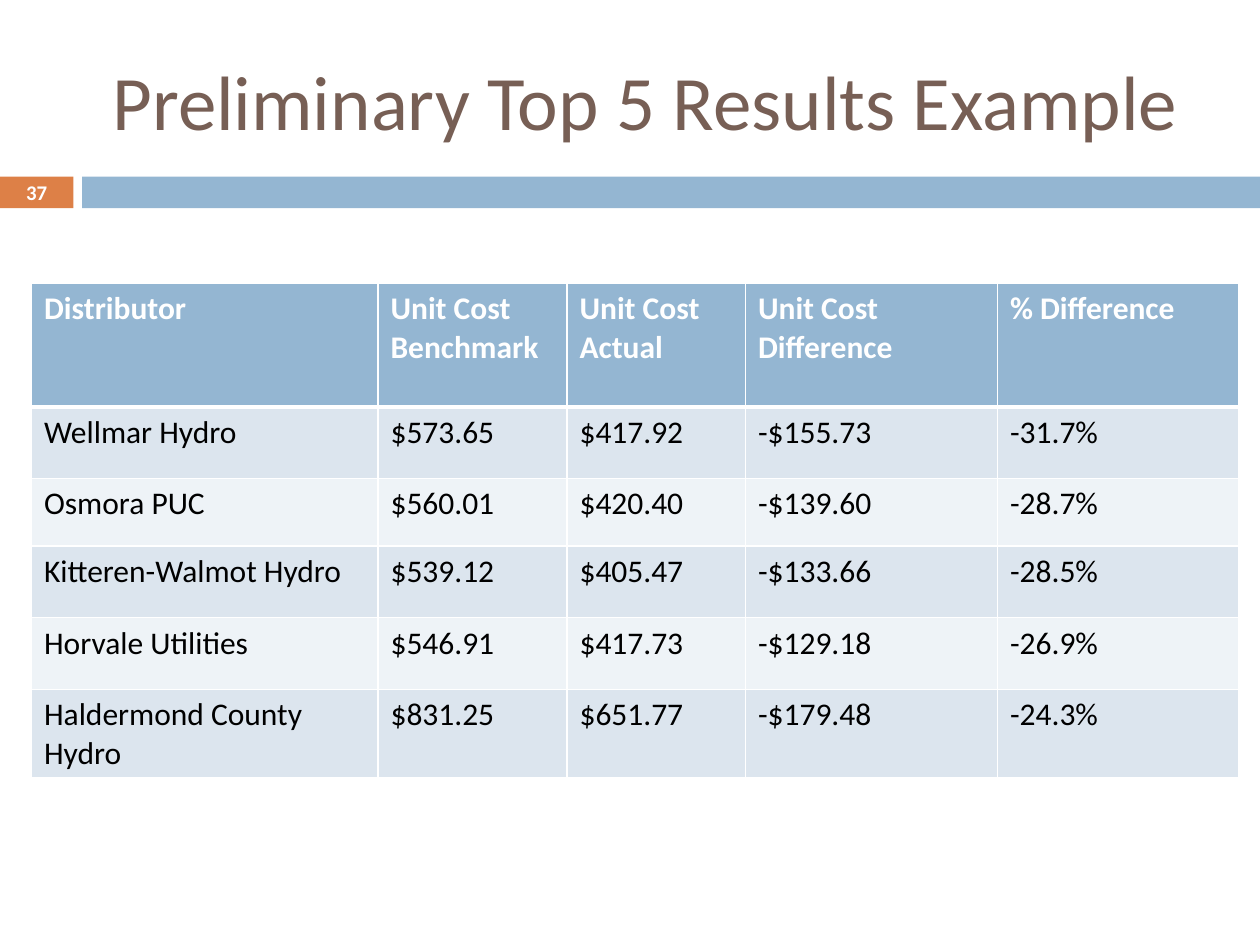
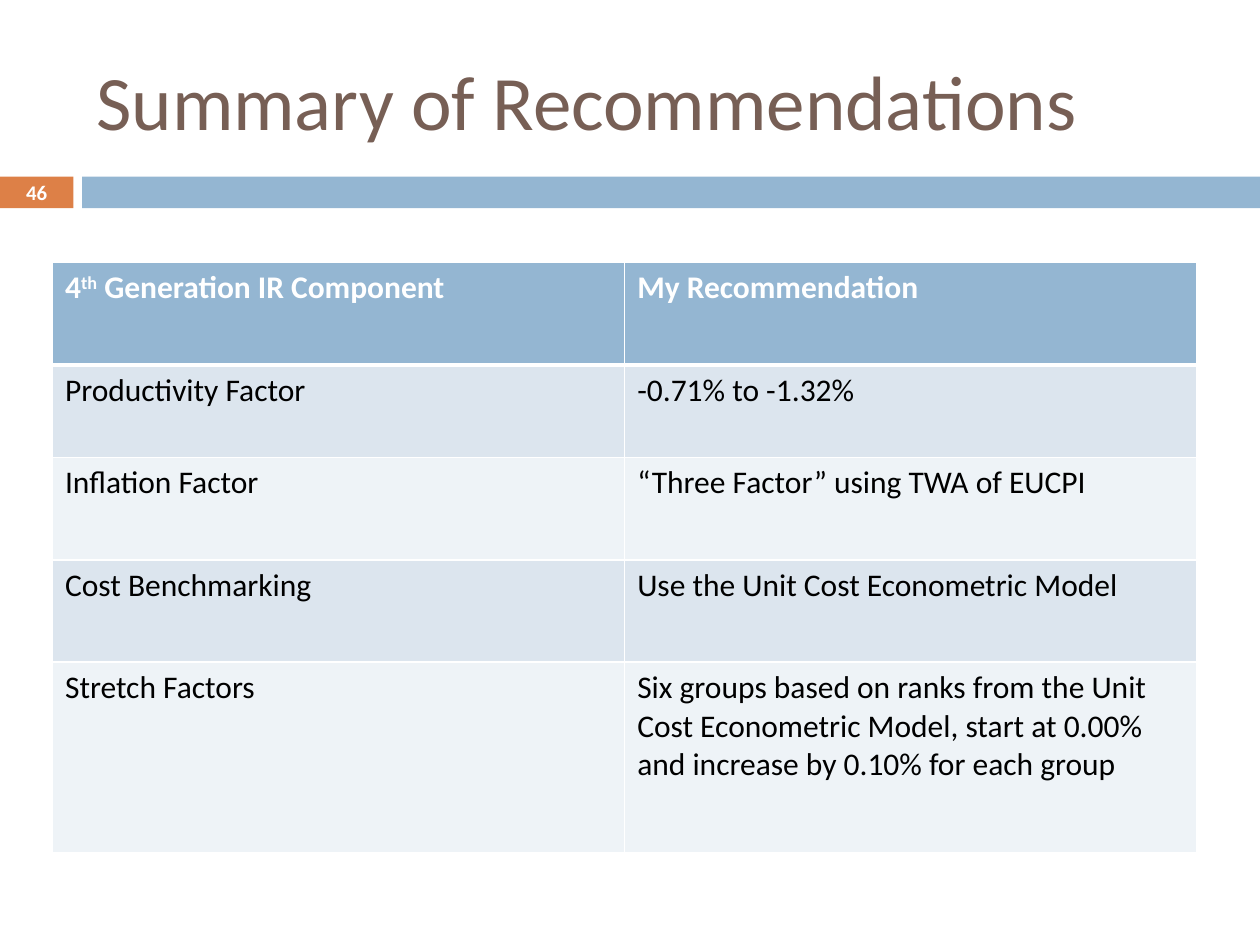
from dataclasses import dataclass

from lxml import etree
from pptx import Presentation
from pptx.dml.color import RGBColor
from pptx.enum.shapes import MSO_SHAPE
from pptx.enum.text import MSO_ANCHOR, PP_ALIGN
from pptx.oxml.ns import qn
from pptx.util import Pt

RECT = MSO_SHAPE.RECTANGLE
MIDDLE = MSO_ANCHOR.MIDDLE
LEFT, CENTER = PP_ALIGN.LEFT, PP_ALIGN.CENTER


@dataclass(frozen=True)
class Theme:
    font: str = "Calibri"
    title: str = "775F55"
    accent: str = "DD8047"
    band: str = "94B6D2"
    row_dark: str = "DCE5EE"
    row_light: str = "EEF3F7"
    white: str = "FFFFFF"
    black: str = "000000"
    title_size: float = 44
    table_size: float = 18
    number_size: float = 11.9
    thin_line: float = 1
    header_line: float = 3


@dataclass(frozen=True)
class Box:
    left: float
    top: float
    width: float
    height: float

    def lengths(self) -> tuple:
        return Pt(self.left), Pt(self.top), Pt(self.width), Pt(self.height)


@dataclass(frozen=True)
class TableData:
    left: float
    top: float
    col_widths: tuple
    row_heights: tuple
    rows: tuple


@dataclass(frozen=True)
class SlideData:
    title: str
    title_align: PP_ALIGN
    number: str
    table: TableData


THEME = Theme()
NUMBER_BLOCK = Box(0, 101, 42, 18)
BAND = Box(47, 101, 673, 18)
TITLE = Box(48, 18, 642, 78)

# A caret pair marks superscript text
SUPERSCRIPT_MARK = "^"

SLIDES = (
    SlideData("Preliminary Top 5 Results Example", CENTER, "37", TableData(
        18, 162, (198, 108, 102, 144, 138), (70.5, 41, 38.5, 41, 41, 41), (
            ("Distributor", "Unit Cost Benchmark", "Unit Cost Actual",
             "Unit Cost Difference", "% Difference"),
            ("Wellmar Hydro", "$573.65", "$417.92", "-$155.73", "-31.7%"),
            ("Osmora PUC", "$560.01", "$420.40", "-$139.60", "-28.7%"),
            ("Kitteren-Walmot Hydro", "$539.12", "$405.47", "-$133.66", "-28.5%"),
            ("Horvale Utilities", "$546.91", "$417.73", "-$129.18", "-26.9%"),
            ("Haldermond County Hydro", "$831.25", "$651.77", "-$179.48", "-24.3%"),
        ))),
    SlideData("Summary of Recommendations", LEFT, "46", TableData(
        30, 150, (327, 327), (58.5, 53, 58.5, 58.5, 109), (
            ("4^th^ Generation IR Component", "My Recommendation"),
            ("Productivity Factor", "-0.71% to -1.32%"),
            ("Inflation Factor", "“Three Factor” using TWA of EUCPI"),
            ("Cost Benchmarking", "Use the Unit Cost Econometric Model"),
            ("Stretch Factors",
             "Six groups based on ranks from the Unit Cost Econometric Model, "
             "start at 0.00% and increase by 0.10% for each group"),
        ))),
)


def style_run(r, size: float, color: str, bold: bool = False) -> None:
    r.font.name = THEME.font
    r.font.size = Pt(size)
    r.font.bold = bold
    r.font.color.rgb = RGBColor.from_string(color)


def add_bar(slide, box: Box, color: str) -> None:
    sp = slide.shapes.add_shape(RECT, *box.lengths())
    sp.shadow.inherit = False
    sp.fill.solid()
    sp.fill.fore_color.rgb = RGBColor.from_string(color)
    sp.line.fill.background()


def add_label(slide, box: Box, text: str, size: float, color: str,
              align: PP_ALIGN, bold: bool = False) -> None:
    tf = slide.shapes.add_textbox(*box.lengths()).text_frame
    tf.word_wrap = True
    tf.vertical_anchor = MIDDLE
    tf.margin_top = tf.margin_bottom = 0
    tf.text = text
    p = tf.paragraphs[0]
    p.alignment = align
    style_run(p.runs[0], size, color, bold)


def set_borders(cell, top: float, bottom: float) -> None:
    """Draw white lines round a cell; call before the cell is filled."""
    tc_pr = cell._tc.get_or_add_tcPr()
    widths = {"a:lnL": THEME.thin_line, "a:lnR": THEME.thin_line,
              "a:lnT": top, "a:lnB": bottom}
    for tag, width in widths.items():
        line = etree.SubElement(tc_pr, qn(tag), w=str(Pt(width)))
        fill = etree.SubElement(line, qn("a:solidFill"))
        etree.SubElement(fill, qn("a:srgbClr"), val=THEME.white)


def fill_cell(cell, text: str, row: int) -> None:
    header = row == 0
    set_borders(cell,
                top=THEME.header_line if row == 1 else THEME.thin_line,
                bottom=THEME.header_line if header else THEME.thin_line)
    stripe = THEME.row_dark if row % 2 else THEME.row_light
    cell.fill.solid()
    cell.fill.fore_color.rgb = RGBColor.from_string(THEME.band if header else stripe)
    p = cell.text_frame.paragraphs[0]
    for i, part in enumerate(text.split(SUPERSCRIPT_MARK)):
        r = p.add_run()
        r.text = part
        style_run(r, THEME.table_size, THEME.white if header else THEME.black, header)
        if i % 2:
            r._r.get_or_add_rPr().set("baseline", "30000")


def add_data_table(slide, data: TableData) -> None:
    box = Box(data.left, data.top, sum(data.col_widths), sum(data.row_heights))
    table = slide.shapes.add_table(
        len(data.rows), len(data.col_widths), *box.lengths()).table
    for column, width in zip(table.columns, data.col_widths):
        column.width = Pt(width)
    for i, (height, texts) in enumerate(zip(data.row_heights, data.rows)):
        table.rows[i].height = Pt(height)
        for j, text in enumerate(texts):
            fill_cell(table.cell(i, j), text, i)


def add_slide(prs, data: SlideData) -> None:
    slide = prs.slides.add_slide(prs.slide_layouts[6])
    # Shared frame: number block, band and title
    add_bar(slide, NUMBER_BLOCK, THEME.accent)
    add_bar(slide, BAND, THEME.band)
    add_label(slide, TITLE, data.title, THEME.title_size, THEME.title, data.title_align)
    # Content
    add_data_table(slide, data.table)
    add_label(slide, NUMBER_BLOCK, data.number, THEME.number_size, THEME.white,
              CENTER, bold=True)


def main() -> None:
    prs = Presentation()
    prs.slide_width, prs.slide_height = Pt(720), Pt(540)
    for data in SLIDES:
        add_slide(prs, data)
    prs.save("out.pptx")


if __name__ == "__main__":
    main()
